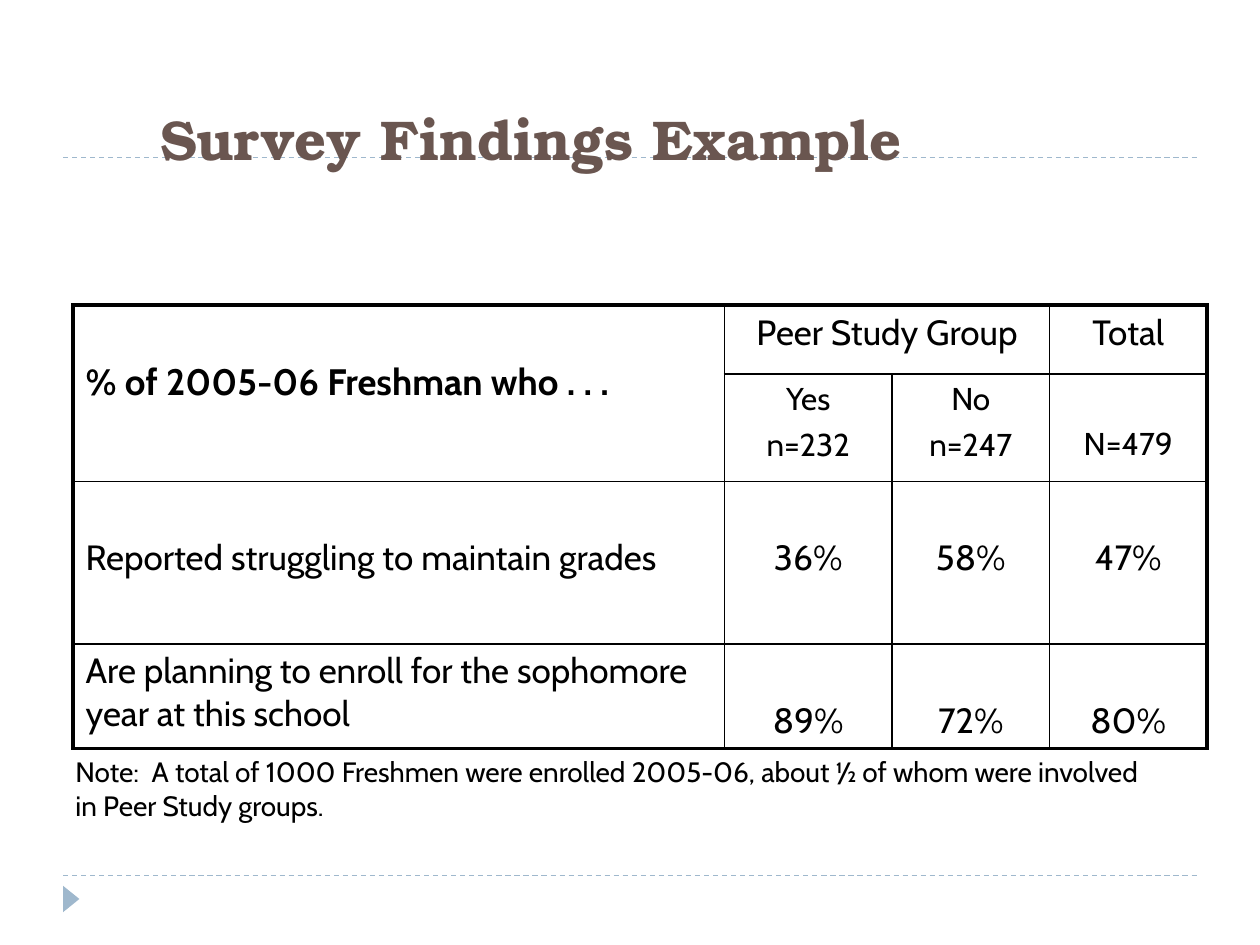
from pptx import Presentation
from pptx.dml.color import RGBColor
from pptx.enum.dml import MSO_LINE
from pptx.enum.shapes import MSO_CONNECTOR, MSO_SHAPE
from pptx.enum.text import MSO_ANCHOR, PP_ALIGN
from pptx.oxml.ns import qn
from pptx.util import Inches, Pt
from lxml.etree import SubElement

TITLE = "Survey Findings Example"
NOTE = ("Note:  A total of 1000 Freshmen were enrolled 2005-06, about ½ of whom "
        "were involved in Peer Study groups.")
ROWS = [
    ["% of 2005-06 Freshman who . . .", "Peer Study Group", "", "Total"],
    ["", "Yes\nn=232", "No\nn=247", "N=479"],
    ["Reported struggling to maintain grades", "36%", "58%", "47%"],
    ["Are planning to enroll for the sophomore year at this school", "89%", "72%", "80%"],
]
MERGES = [((0, 0), (1, 0)), ((0, 1), (0, 2))]
COLUMN_WIDTHS = [5.17, 1.33, 1.25, 1.25]
ROW_HEIGHTS = [0.55, 0.85, 1.29, 0.82]
TOP_MARGINS = [
    [0.44, 0.05, 0.05, 0.05],
    [0.05, 0.05, 0.05, 0.4],
    [0.44, 0.44, 0.44, 0.44],
    [0.05, 0.44, 0.44, 0.44],
]
RULE_HEIGHTS = [6.95, 1.25]
BODY_FONT, TITLE_FONT = "Cabin", "TeX Gyre Bonum"
BLACK, BROWN, BLUE = "000000", "6A5650", "9FB8CD"


def color(value):
    return RGBColor.from_string(value)


def style(para, name, size, value, bold=False):
    font = para.font
    font.name, font.size, font.bold = name, Pt(size), bold
    font.color.rgb = color(value)


def add_rule(page, y):
    rule = page.shapes.add_connector(
        MSO_CONNECTOR.STRAIGHT, Inches(0.5), Inches(y), Inches(9.5), Inches(y))
    rule.line.color.rgb = color(BLUE)
    rule.line.width = Pt(0.75)
    rule.line.dash_style = MSO_LINE.DASH
    SubElement(rule.element.spPr, qn("a:effectLst"))


def set_borders(cell, widths):
    properties = cell._tc.get_or_add_tcPr()
    for index, (side, width) in enumerate(widths.items()):
        line = properties.makeelement(qn(f"a:ln{side}"), {"w": str(Pt(width))})
        fill = SubElement(line, qn("a:solidFill"))
        SubElement(fill, qn("a:srgbClr"), val=BLACK)
        properties.insert(index, line)


def fill_cell(cell, row, column):
    cell.fill.background()
    cell.vertical_anchor = MSO_ANCHOR.TOP
    cell.margin_top = Inches(TOP_MARGINS[row][column])
    cell.text = ROWS[row][column]
    size = 18 if row == 1 else 21 if (row, column) == (0, 0) else 20
    for index, para in enumerate(cell.text_frame.paragraphs):
        para.alignment = PP_ALIGN.CENTER if column else PP_ALIGN.LEFT
        if index:
            para.space_before = Pt(3.8)
        style(para, BODY_FONT, size, BLACK, bold=(row, column) == (0, 0))
    outer = {
        "L": column == 0,
        "R": column == len(COLUMN_WIDTHS) - 1,
        "T": row == 0,
        "B": row == len(ROWS) - 1,
    }
    set_borders(cell, {side: 2.25 if edge else 1 for side, edge in outer.items()})


def add_findings(page):
    table = page.shapes.add_table(
        len(ROWS), len(COLUMN_WIDTHS), Inches(0.58), Inches(2.42),
        Inches(sum(COLUMN_WIDTHS)), Inches(sum(ROW_HEIGHTS))).table
    table.first_row = table.horz_banding = False
    for column, width in zip(table.columns, COLUMN_WIDTHS):
        column.width = Inches(width)
    for row, height in zip(table.rows, ROW_HEIGHTS):
        row.height = Inches(height)
    for row in range(len(ROWS)):
        for column in range(len(COLUMN_WIDTHS)):
            fill_cell(table.cell(row, column), row, column)
    for start, end in MERGES:
        table.cell(*start).merge(table.cell(*end))


def add_title(page):
    title = page.shapes.title
    title.left, title.top = Inches(1.17), Inches(0.58)
    title.width, title.height = Inches(8.33), Inches(0.83)
    title.text_frame.text = TITLE
    title.text_frame.vertical_anchor = MSO_ANCHOR.BOTTOM
    para = title.text_frame.paragraphs[0]
    para.alignment = PP_ALIGN.LEFT
    style(para, TITLE_FONT, 32, BROWN, bold=True)
    title.element.getparent().append(title.element)


def add_note(page):
    box = page.shapes.add_textbox(Inches(0.5), Inches(5.94), Inches(8.75), Inches(0.64))
    box.text_frame.word_wrap = True
    box.text_frame.text = NOTE
    style(box.text_frame.paragraphs[0], BODY_FONT, 16, BLACK)


def add_marker(page):
    marker = page.shapes.add_shape(
        MSO_SHAPE.ISOSCELES_TRIANGLE, Inches(0.46), Inches(7.07), Inches(0.21), Inches(0.13))
    marker.rotation = 90
    marker.shadow.inherit = False
    marker.fill.solid()
    marker.fill.fore_color.rgb = color(BLUE)
    marker.line.fill.background()


def main():
    deck = Presentation()
    deck.slide_width, deck.slide_height = Inches(10), Inches(7.5)
    page = deck.slides.add_slide(deck.slide_layouts[5])
    for y in RULE_HEIGHTS:
        add_rule(page, y)
    add_marker(page)
    add_title(page)
    add_findings(page)
    add_note(page)
    deck.save("out.pptx")


if __name__ == "__main__":
    main()
